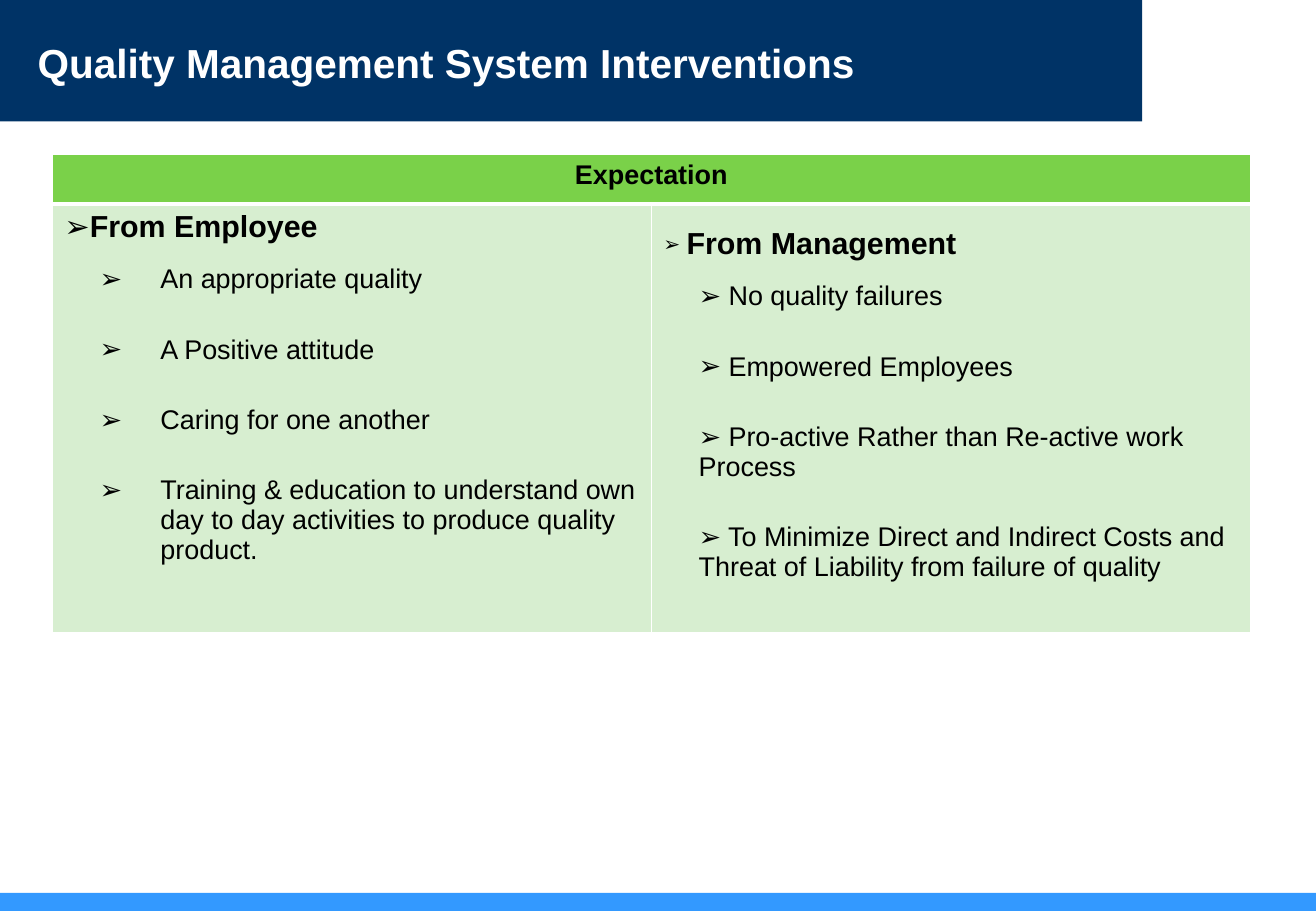
from lxml import etree
from pptx import Presentation
from pptx.dml.color import RGBColor
from pptx.enum import shapes, text
from pptx.oxml import ns
from pptx.util import Inches, Pt

COLOURS = {"navy": "003366", "blue": "3399FF", "green": "7AD149",
           "pale": "D7EED0", "white": "FFFFFF", "black": "000000"}
FONT = "Arial"

EMPLOYEE = ["An appropriate quality", "A Positive attitude", "Caring for one another",
            "Training & education to understand own day to day activities "
            "to produce quality product."]
# The space parts the text from its bullet, as these items have no hanging indent.
MANAGEMENT = [" No quality failures", " Empowered Employees",
              " Pro-active Rather than Re-active work Process",
              " To Minimize Direct and Indirect Costs and Threat of Liability "
              "from failure of quality"]


def colour(name):
    return RGBColor.from_string(COLOURS[name])


def style(para, size, name="black", bold=False):
    for span in para.runs:
        span.font.name = FONT
        span.font.size = Pt(size)
        span.font.bold = bold
        span.font.color.rgb = colour(name)


def add_band(slide, box, name):
    """Place a filled strip behind everything else on the slide."""
    band = slide.shapes.add_shape(shapes.MSO_SHAPE.RECTANGLE, *map(Inches, box))
    band.shadow.inherit = False
    band.fill.solid()
    band.fill.fore_color.rgb = colour(name)
    band.line.fill.background()
    slide.shapes._spTree.insert(2, band._element)


def add_title(slide, box, wording):
    title = slide.shapes.title
    title.left, title.top, title.width, title.height = map(Inches, box)
    frame = title.text_frame
    frame.text = wording
    frame.word_wrap = True
    frame.auto_size = text.MSO_AUTO_SIZE.NONE
    frame.vertical_anchor = text.MSO_ANCHOR.MIDDLE
    frame.paragraphs[0].alignment = text.PP_ALIGN.LEFT
    style(frame.paragraphs[0], 24, "white", True)


def add_bullet(para, margin, indent, percent=100):
    props = para._p.get_or_add_pPr()
    props.set("marL", str(Inches(margin)))
    props.set("indent", str(Inches(indent)))
    for tag, key, value in (("a:buSzPct", "val", str(percent * 1000)),
                            ("a:buFont", "typeface", FONT),
                            ("a:buChar", "char", "➢")):
        etree.SubElement(props, ns.qn(tag)).set(key, value)


def paint_cell(cell, fill, top, bottom):
    """Give a cell white borders, with top and bottom in points, and a fill."""
    props = cell._tc.get_or_add_tcPr()
    for side, width in (("L", 1), ("R", 1), ("T", top), ("B", bottom)):
        line = etree.SubElement(props, ns.qn(f"a:ln{side}"), w=str(Pt(width)))
        solid = etree.SubElement(line, ns.qn("a:solidFill"))
        etree.SubElement(solid, ns.qn("a:srgbClr"), val=COLOURS["white"])
    cell.fill.solid()
    cell.fill.fore_color.rgb = colour(fill)


def fill_list(cell, heading, items, margin, indent, percent=100, spacing=None):
    """Write a bold heading and its bulleted items into a cell."""
    frame = cell.text_frame
    frame.text = heading
    head = frame.paragraphs[0]
    head.line_spacing = spacing
    add_bullet(head, 0.19, -0.19, percent)
    style(head, 18, bold=True)
    for item in items:
        para = frame.add_paragraph()
        para.text = item
        para.space_before = para.space_after = Pt(12)
        add_bullet(para, margin, indent)
        style(para, 16)


def add_expectations(slide, box):
    left, top, width, height = box
    table = slide.shapes.add_table(2, 2, *map(Inches, box)).table
    header_height = 0.41
    table.rows[0].height = Inches(header_height)
    table.rows[1].height = Inches(height - header_height)
    for column in range(2):
        table.columns[column].width = Inches(width / 2)
        paint_cell(table.cell(0, column), "green", 1, 3)
        paint_cell(table.cell(1, column), "pale", 3, 1)

    header = table.cell(0, 0)
    header.merge(table.cell(0, 1))
    header.text_frame.text = "Expectation"
    header.text_frame.paragraphs[0].alignment = text.PP_ALIGN.CENTER
    style(header.text_frame.paragraphs[0], 16, bold=True)

    fill_list(table.cell(1, 0), "From Employee", EMPLOYEE, 0.79, -0.5)
    fill_list(table.cell(1, 1), "From Management", MANAGEMENT, 0.29, 0,
              percent=67, spacing=1.5)


def main():
    deck = Presentation()
    deck.slide_width, deck.slide_height = Inches(10.83), Inches(7.5)
    slide = deck.slides.add_slide(deck.slide_layouts[5])
    add_band(slide, (0, 0, 9.4, 1), "navy")
    add_band(slide, (0, 7.35, 10.83, 0.15), "blue")
    add_title(slide, (0.21, 0.26, 8.82, 0.51), "Quality Management System Interventions")
    add_expectations(slide, (0.43, 1.27, 9.86, 3.94))
    deck.save("out.pptx")


if __name__ == "__main__":
    main()
